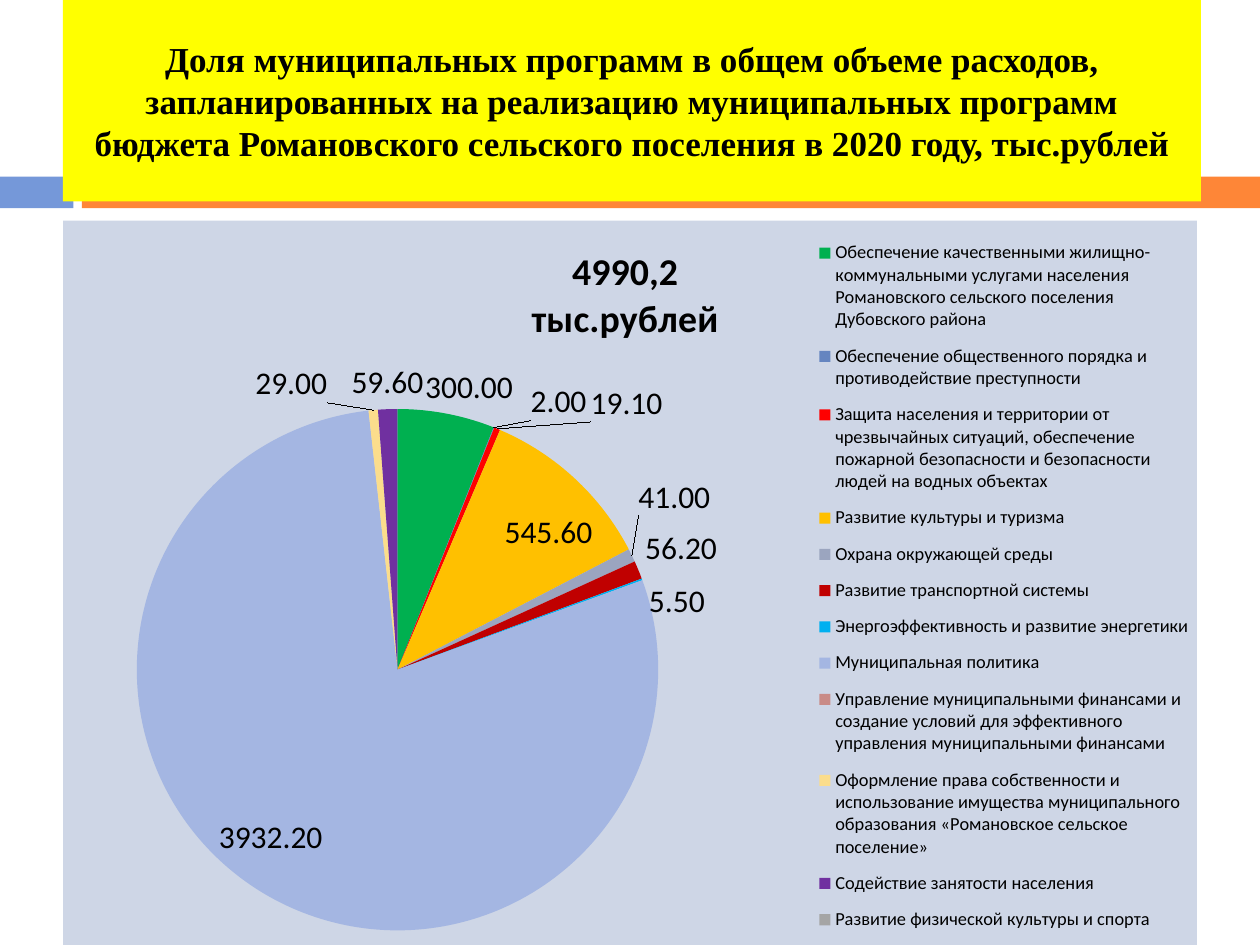
from lxml import etree
from pptx import Presentation
from pptx.chart.data import CategoryChartData
from pptx.dml.color import RGBColor
from pptx.enum.chart import XL_CHART_TYPE, XL_LABEL_POSITION, XL_LEGEND_POSITION
from pptx.enum.shapes import MSO_SHAPE
from pptx.enum.text import MSO_ANCHOR, PP_ALIGN
from pptx.oxml import parse_xml
from pptx.oxml.ns import nsdecls, qn
from pptx.util import Cm, Pt

BLACK = RGBColor(0x00, 0x00, 0x00)
YELLOW = RGBColor(0xFF, 0xFF, 0x00)
BLUE = RGBColor(0x75, 0x98, 0xD9)
ORANGE = RGBColor(0xFE, 0x86, 0x37)
PANEL = RGBColor(0xCE, 0xD6, 0xE6)
GREEN = RGBColor(0x00, 0xB0, 0x50)
STEEL = RGBColor(0x65, 0x85, 0xC0)
RED = RGBColor(0xFF, 0x00, 0x00)
AMBER = RGBColor(0xFF, 0xC0, 0x00)
GREY_BLUE = RGBColor(0x9B, 0xA5, 0xBF)
DARK_RED = RGBColor(0xC0, 0x00, 0x00)
SKY = RGBColor(0x00, 0xB0, 0xF0)
PALE_BLUE = RGBColor(0xA4, 0xB6, 0xE2)
ROSE = RGBColor(0xC9, 0x8B, 0x87)
SAND = RGBColor(0xFB, 0xDD, 0x8C)
PURPLE = RGBColor(0x70, 0x30, 0xA0)
GREY = RGBColor(0xA5, 0xA5, 0xA5)

HEADING = ("Доля муниципальных программ в общем объеме расходов, запланированных на "
           "реализацию муниципальных программ бюджета Романовского сельского поселения "
           "в 2020 году, тыс.рублей")
TOTAL = ["4990,2", "тыс.рублей"]
PROGRAMS = [
    ("Обеспечение качественными жилищно-коммунальными услугами населения "
     "Романовского сельского поселения Дубовского района", 300, GREEN),
    ("Обеспечение общественного порядка и противодействие преступности", 2, STEEL),
    ("Защита населения и территории от чрезвычайных ситуаций, обеспечение пожарной "
     "безопасности и безопасности людей на водных объектах", 19.1, RED),
    ("Развитие культуры и туризма", 545.6, AMBER),
    ("Охрана окружающей среды", 41, GREY_BLUE),
    ("Развитие транспортной системы", 56.2, DARK_RED),
    ("Энергоэффективность и развитие энергетики", 5.5, SKY),
    ("Муниципальная политика", 3932.2, PALE_BLUE),
    ("Управление муниципальными финансами и создание условий для эффективного "
     "управления муниципальными финансами", 0, ROSE),
    ("Оформление права собственности и использование имущества муниципального "
     "образования «Романовское сельское поселение»", 29, SAND),
    ("Содействие занятости населения", 59.6, PURPLE),
    ("Развитие физической культуры и спорта", 0, GREY),
]
LABEL_SHIFTS = {0: (-0.02, 0), 1: (0.03, 0), 2: (0.08, 0), 3: (0.02, 0.04),
                4: (0, -0.05), 6: (0, 0.06), 7: (-0.04, -0.04), 9: (-0.04, 0)}
INSIDE_FROM = 500
NUMBER_FORMAT = "0.00"


def add_text(p, text, size, font, bold=False, color=BLACK):
    """Add a formatted run to a paragraph."""
    r = p.add_run()
    r.text = text
    r.font.size, r.font.name, r.font.bold = Pt(size), font, bold
    r.font.color.rgb = color


def add_box(s, x, y, w, h, fill):
    """Add a plain filled rectangle."""
    sp = s.shapes.add_shape(MSO_SHAPE.RECTANGLE, x, y, w, h)
    sp.shadow.inherit = False
    sp.fill.solid()
    sp.fill.fore_color.rgb = fill
    sp.line.fill.background()
    return sp


def add_band(s, x, y, w, h):
    """Draw the two-coloured band across the slide."""
    left, gap = Cm(1.48), Cm(0.17)
    add_box(s, x, y, left, h, BLUE)
    add_box(s, x + left + gap, y, w - left - gap, h, ORANGE)


def add_heading(s, x, y, w, h):
    """Draw the yellow heading panel."""
    tf = add_box(s, x, y, w, h, YELLOW).text_frame
    tf.word_wrap = True
    tf.vertical_anchor = MSO_ANCHOR.MIDDLE
    p = tf.paragraphs[0]
    p.alignment = PP_ALIGN.CENTER
    add_text(p, HEADING, 20, "Times New Roman", bold=True)


def make_layout(x, y, w=None, h=None, mode="edge", inner=False):
    """Build a manual layout in fractions of the chart area."""
    parts = [("layoutTarget", "inner")] if inner else []
    if mode == "edge":
        parts += [("xMode", mode), ("yMode", mode)]
    parts += [("x", x), ("y", y)]
    if w is not None:
        parts += [("w", w), ("h", h)]
    body = "".join(f'<c:{tag} val="{val}"/>' for tag, val in parts)
    return parse_xml(f'<c:layout {nsdecls("c")}><c:manualLayout>{body}'
                     "</c:manualLayout></c:layout>")


def set_layout(parent, layout, after=None):
    """Replace the layout of a chart part, after the named child or first."""
    for old in parent.findall(qn("c:layout")):
        parent.remove(old)
    if after is None:
        parent.insert(0, layout)
    else:
        parent.find(qn(after)).addnext(layout)


def format_slices(series):
    """Colour the slices and place their labels."""
    labels = series.data_labels
    labels.show_value = True
    labels.number_format, labels.number_format_is_linked = NUMBER_FORMAT, False
    labels.font.size = Pt(18)
    for i, (_, value, color) in enumerate(PROGRAMS):
        point = series.points[i]
        point.format.fill.solid()
        point.format.fill.fore_color.rgb = color
        point.data_label.font.size = Pt(18)
        point.data_label.position = (XL_LABEL_POSITION.INSIDE_END if value > INSIDE_FROM
                                     else XL_LABEL_POSITION.OUTSIDE_END)
    for i, label in enumerate(labels._element.findall(qn("c:dLbl"))):
        idx = label.find(qn("c:idx"))
        if PROGRAMS[i][1] == 0:
            for child in list(label)[1:]:
                label.remove(child)
            etree.SubElement(label, qn("c:delete")).set("val", "1")
            continue
        idx.addnext(parse_xml(f'<c:numFmt {nsdecls("c")} formatCode="{NUMBER_FORMAT}" '
                              'sourceLinked="0"/>'))
        if i in LABEL_SHIFTS:
            set_layout(label, make_layout(*LABEL_SHIFTS[i], mode="factor"), "c:idx")


def add_pie(s, x, y, w, h):
    """Draw the pie chart with its title and legend."""
    data = CategoryChartData(number_format=NUMBER_FORMAT)
    data.categories = [name for name, _, _ in PROGRAMS]
    data.add_series("Series 1", [value for _, value, _ in PROGRAMS])
    chart = s.shapes.add_chart(XL_CHART_TYPE.PIE, x, y, w, h, data).chart
    chart.font.size, chart.font.name = Pt(18), "Calibri"
    chart.font.color.rgb = BLACK
    chart.plots[0].vary_by_categories = True

    tf = chart.chart_title.text_frame
    for i, line in enumerate(TOTAL):
        p = tf.add_paragraph() if i else tf.paragraphs[0]
        add_text(p, line, 21.6, "Calibri", bold=True)
    chart.chart_title.include_in_layout = False
    set_layout(chart.chart_title._element, make_layout(0.41, 0.03), "c:tx")

    chart.has_legend = True
    legend = chart.legend
    legend.position = XL_LEGEND_POSITION.RIGHT
    legend.include_in_layout = False
    legend.font.size = Pt(10.5)
    set_layout(legend._element, make_layout(0.66, 0.01, 0.34, 0.99), "c:legendPos")

    format_slices(chart.plots[0].series[0])
    space = chart._chartSpace
    plot_area = space.find(qn("c:chart")).find(qn("c:plotArea"))
    set_layout(plot_area, make_layout(0.06, 0.26, 0.47, 0.72, inner=True))
    space.find(qn("c:chart")).addnext(parse_xml(
        f'<c:spPr {nsdecls("c", "a")}><a:solidFill><a:srgbClr val="{PANEL}"/>'
        "</a:solidFill><a:ln><a:noFill/></a:ln></c:spPr>"))


def main():
    """Build the slide and save it."""
    prs = Presentation()
    prs.slide_width, prs.slide_height = Cm(25.4), Cm(19.05)
    s = prs.slides.add_slide(prs.slide_layouts[6])
    add_band(s, 0, Cm(3.56), prs.slide_width, Cm(0.64))
    add_heading(s, Cm(1.27), 0, Cm(22.94), Cm(4.06))
    add_pie(s, Cm(1.27), Cm(4.45), Cm(22.86), Cm(14.6))
    prs.save("out.pptx")


if __name__ == "__main__":
    main()
